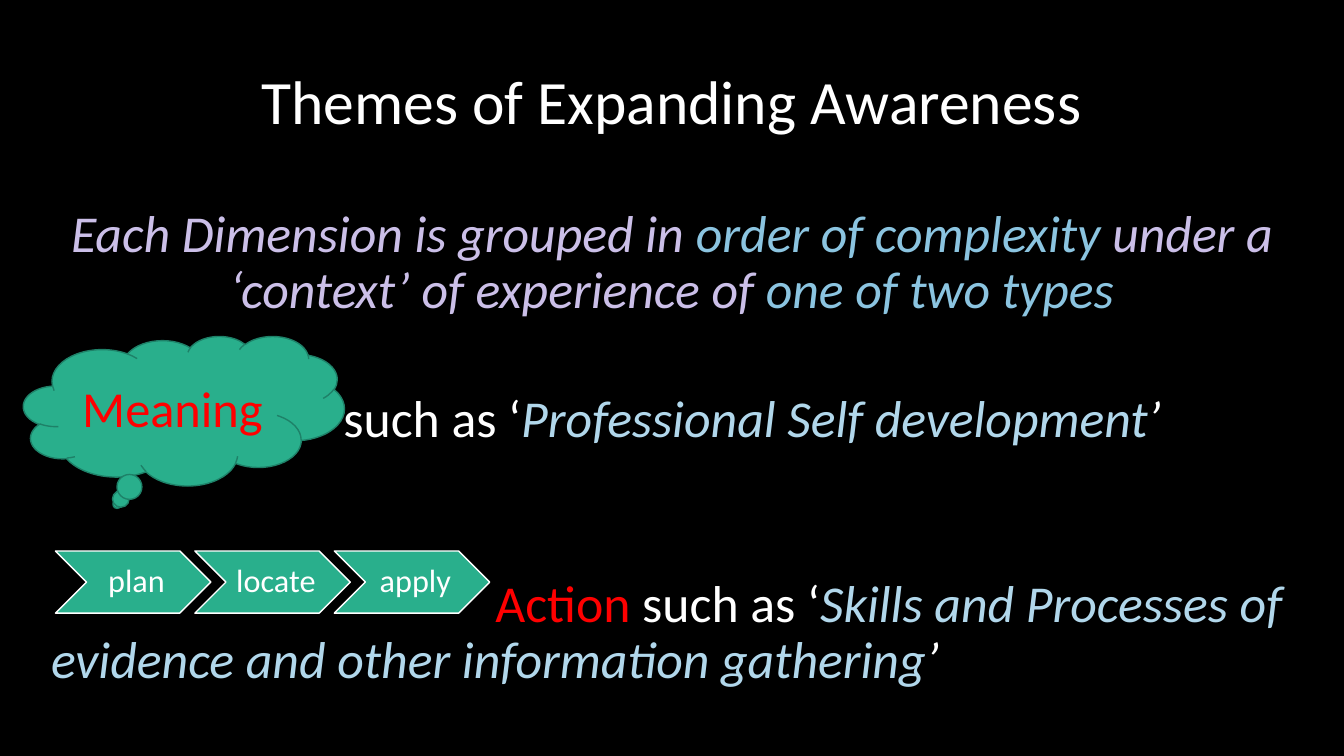
"""Build the slide on themes of expanding awareness."""
from dataclasses import dataclass

from pptx import Presentation
from pptx.dml.color import RGBColor
from pptx.enum.shapes import MSO_SHAPE as Preset
from pptx.enum.text import MSO_ANCHOR as Anchor, PP_ALIGN as Align
from pptx.shapes.autoshape import Shape
from pptx.slide import Slide
from pptx.text.text import TextFrame
from pptx.util import Emu, Inches, Pt

BLACK = RGBColor(0x00, 0x00, 0x00)
WHITE = RGBColor(0xFF, 0xFF, 0xFF)
RED = RGBColor(0xFF, 0x00, 0x00)
LILAC = RGBColor(0xCB, 0xBF, 0xE8)
BLUE = RGBColor(0x8B, 0xC4, 0xE0)
PALE = RGBColor(0xB1, 0xD7, 0xEB)
GREEN = RGBColor(0x29, 0xAF, 0x8C)
PINE = RGBColor(0x1E, 0x81, 0x68)

WIDTH, HEIGHT = Inches(13.33), Inches(7.5)
COLS, ROWS = 160, 90


@dataclass
class Box:
    col: float
    row: float
    wide: float
    high: float


@dataclass
class Run:
    text: str
    color: RGBColor
    size: float = 37
    slant: bool = False


@dataclass
class Para:
    runs: list[Run]
    align: Align = Align.CENTER
    before: float = 0
    indent: float = 0
    pitch: float = 0.9


def across(cols: float) -> Emu:
    """Turn grid columns into a length."""
    return Emu(round(WIDTH * cols / COLS))


def down(rows: float) -> Emu:
    """Turn grid rows into a length."""
    return Emu(round(HEIGHT * rows / ROWS))


def place(box: Box) -> tuple[Emu, Emu, Emu, Emu]:
    """Give the left, top, width and height of a box."""
    return across(box.col), down(box.row), across(box.wide), down(box.high)


def write(frame: TextFrame, paras: list[Para], anchor: Anchor = Anchor.MIDDLE) -> None:
    """Fill a text frame run by run."""
    frame.word_wrap = True
    frame.vertical_anchor = anchor
    for index, para in enumerate(paras):
        line = frame.add_paragraph() if index else frame.paragraphs[0]
        line.alignment = para.align
        line.line_spacing = para.pitch
        line.space_before = Pt(para.before)
        if para.indent:
            line._p.get_or_add_pPr().set("indent", str(across(para.indent)))
        for part in para.runs:
            run = line.add_run()
            run.text = part.text
            run.font.name = "Calibri"
            run.font.size = Pt(part.size)
            run.font.italic = part.slant
            run.font.color.rgb = part.color


def draw(slide: Slide, kind: Preset, box: Box, edge: RGBColor, para: Para) -> Shape:
    """Add a green shape with its label."""
    shape = slide.shapes.add_shape(kind, *place(box))
    shape.shadow.inherit = False
    shape.fill.solid()
    shape.fill.fore_color.rgb = GREEN
    shape.line.color.rgb = edge
    shape.line.width = Pt(1)
    write(shape.text_frame, [para])
    return shape


TITLE = [Para([Run("Themes of Expanding Awareness", WHITE, 44)])]
BODY = [
    Para([
        Run("Each Dimension is grouped in ", LILAC, slant=True),
        Run("order of complexity ", BLUE, slant=True),
        Run("under a ‘context’ of experience of ", LILAC, slant=True),
        Run("one of two types", BLUE, slant=True),
    ]),
    Para([
        Run("such as ‘", WHITE),
        Run("Professional Self development", PALE, slant=True),
        Run("’", WHITE, slant=True),
    ], Align.LEFT, before=52.5, indent=34.8),
    Para([
        Run("Action", RED),
        Run(" such as ‘", WHITE),
        Run("Skills and Processes of evidence and other information gathering", PALE, slant=True),
        Run("’", WHITE, slant=True),
    ], Align.LEFT, before=92.5, indent=52.9),
]
STEPS = ["plan", "locate", "apply"]
FIRST, STRIDE = Box(6.6, 65.6, 18.5, 7.4), 16.6


def main() -> None:
    """Lay out the slide and save it."""
    deck = Presentation()
    deck.slide_width, deck.slide_height = WIDTH, HEIGHT
    slide = deck.slides.add_slide(deck.slide_layouts[6])
    slide.background.fill.solid()
    slide.background.fill.fore_color.rgb = BLACK

    title = slide.shapes.add_textbox(*place(Box(11, 4.8, 138, 15.4)))
    write(title.text_frame, TITLE)
    body = slide.shapes.add_textbox(*place(Box(4.9, 20.2, 150.2, 63.8)))
    body.text_frame.margin_top = down(4.5)
    write(body.text_frame, BODY, Anchor.TOP)

    for index, step in enumerate(STEPS):
        box = Box(FIRST.col + index * STRIDE, FIRST.row, FIRST.wide, FIRST.high)
        shape = draw(slide, Preset.CHEVRON, box, WHITE, Para([Run(step, WHITE, 23)]))
        frame = shape.text_frame
        frame.word_wrap = False
        frame.margin_left = across(1.2)
        frame.margin_right = across(0.4)
        frame.margin_top = frame.margin_bottom = down(0.4)

    cloud = Para([Run("Meaning", RED, 36)], pitch=1.0)
    draw(slide, Preset.CLOUD_CALLOUT, Box(2.8, 40, 38.2, 17.8), PINE, cloud)
    deck.save("out.pptx")


if __name__ == "__main__":
    main()
